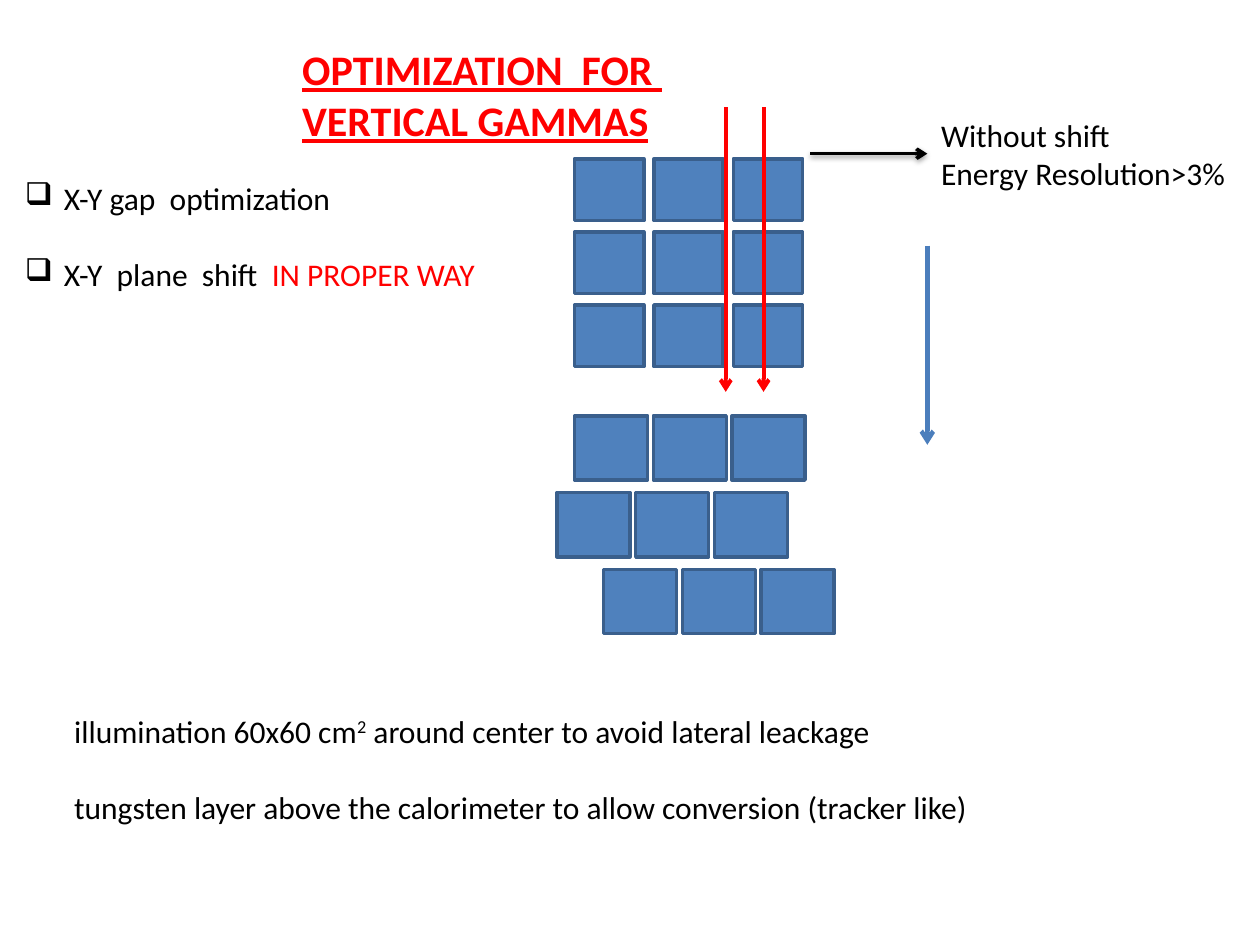
from lxml.etree import SubElement
from pptx import Presentation
from pptx.dml.color import RGBColor
from pptx.enum.shapes import MSO_CONNECTOR as Connector, MSO_SHAPE as Shape
from pptx.enum.text import PP_ALIGN as Align
from pptx.oxml.ns import qn
from pptx.util import Inches, Pt

BLACK = RGBColor(0x00, 0x00, 0x00)
RED = RGBColor(0xFF, 0x00, 0x00)
CRYSTAL = RGBColor(0x4F, 0x81, 0xBD)
CRYSTAL_EDGE = RGBColor(0x3A, 0x5F, 0x8C)
ARROW_BLUE = RGBColor(0x4B, 0x7E, 0xBC)

COLUMNS, ROWS = 100, 75


class Page:
    """A slide divided into a grid of columns and rows."""

    font = "Calibri"

    def __init__(self, deck):
        self.slide = deck.slides.add_slide(deck.slide_layouts[6])
        self.column = deck.slide_width / COLUMNS
        self.row = deck.slide_height / ROWS

    def place(self, x, y):
        return round(x * self.column), round(y * self.row)

    def text(self, x, y, width, height, paragraphs, size=18, color=BLACK,
             strong=False, gap=0, bullet=None, wrap=False):
        """Each paragraph is a list of (wording, run font settings)."""
        box = self.slide.shapes.add_textbox(*self.place(x, y),
                                            *self.place(width, height))
        frame = box.text_frame
        frame.word_wrap = wrap
        for index, parts in enumerate(paragraphs):
            paragraph = frame.add_paragraph() if index else frame.paragraphs[0]
            paragraph.alignment = Align.LEFT
            paragraph.space_before = Pt(gap if index else 0)
            font = paragraph.font
            font.name, font.size = self.font, Pt(size)
            font.bold = font.underline = strong
            font.color.rgb = color
            if bullet:
                self.add_bullet(paragraph, bullet)
            for wording, settings in parts:
                run = paragraph.add_run()
                run.text = wording
                if "color" in settings:
                    run.font.color.rgb = settings["color"]
                if "baseline" in settings:
                    properties = run._r.get_or_add_rPr()
                    properties.set("baseline", str(settings["baseline"]))

    def add_bullet(self, paragraph, character):
        properties = paragraph._p.get_or_add_pPr()
        indent = Inches(0.31)
        properties.set("marL", str(indent))
        properties.set("indent", str(-indent))
        mark = properties.makeelement(qn("a:buChar"), {"char": character})
        # The bullet belongs before the default run properties
        properties.find(qn("a:defRPr")).addprevious(mark)

    def crystals(self, lefts, top, width, height, step_x, step_y):
        """Layers of three blocks, one layer for each left edge."""
        for layer, left in enumerate(lefts):
            for place in range(3):
                block = self.slide.shapes.add_shape(
                    Shape.RECTANGLE,
                    *self.place(left + place * step_x, top + layer * step_y),
                    *self.place(width, height))
                block.shadow.inherit = False
                block.fill.solid()
                block.fill.fore_color.rgb = CRYSTAL
                block.line.color.rgb = CRYSTAL_EDGE
                block.line.width = Pt(2)

    def arrow(self, start, end, color, width, shadow=False):
        arrow = self.slide.shapes.add_connector(
            Connector.STRAIGHT, *self.place(*start), *self.place(*end))
        arrow.line.color.rgb = color
        arrow.line.width = Pt(width)
        SubElement(arrow.line._get_or_add_ln(), qn("a:tailEnd"), type="arrow")
        effects = SubElement(arrow._element.spPr, qn("a:effectLst"))
        if shadow:
            outer = SubElement(effects, qn("a:outerShdw"), blurRad=str(Pt(3.1)),
                               dist=str(Pt(1.6)), dir="5400000", rotWithShape="0")
            tone = SubElement(outer, qn("a:srgbClr"), val=str(BLACK))
            SubElement(tone, qn("a:alpha"), val="38000")


deck = Presentation()
deck.slide_width, deck.slide_height = Inches(10), Inches(7.5)
page = Page(deck)

# Aligned layers above, shifted layers below
page.crystals([45.6, 45.6, 45.6], top=12.6, width=5.5, height=4.9,
              step_x=6.3, step_y=5.8)
page.crystals([45.6, 44.2, 47.9], top=33, width=5.8, height=5.1,
              step_x=6.25, step_y=6.1)

# Heading
page.text(23, 3, 40, 9, [[("OPTIMIZATION  FOR  VERTICAL GAMMAS", {})]],
          size=24, color=RED, strong=True, wrap=True)

# Vertical gammas and the path to the shifted layout
for gamma in (57.6, 60.6):
    page.arrow((gamma, 8.5), (gamma, 31.1), RED, 2.25)
page.arrow((73.6, 19.5), (73.6, 35.3), ARROW_BLUE, 2.5)

# Optimization steps
page.text(1, 13.7, 38.4, 10.1, [
    [("X-Y gap  optimization", {})],
    [("X-Y  plane  shift  ", {}), ("IN PROPER WAY", {"color": RED})],
], gap=22, bullet="\u2751")

# Simulation conditions
page.text(4.9, 56, 75.8, 10.1, [
    [("illumination 60x60 cm", {}), ("2", {"baseline": 30000}),
     (" around center to avoid lateral leackage", {})],
    [("tungsten layer above the calorimeter to allow conversion (tracker like)", {})],
], gap=22)

# Result without shift
page.arrow((64.3, 12.2), (73.6, 12.2), BLACK, 2, shadow=True)
page.text(73.7, 8.7, 24.8, 7.1, [
    [("Without shift", {})],
    [("Energy Resolution>3%", {})],
])

deck.save("out.pptx")
